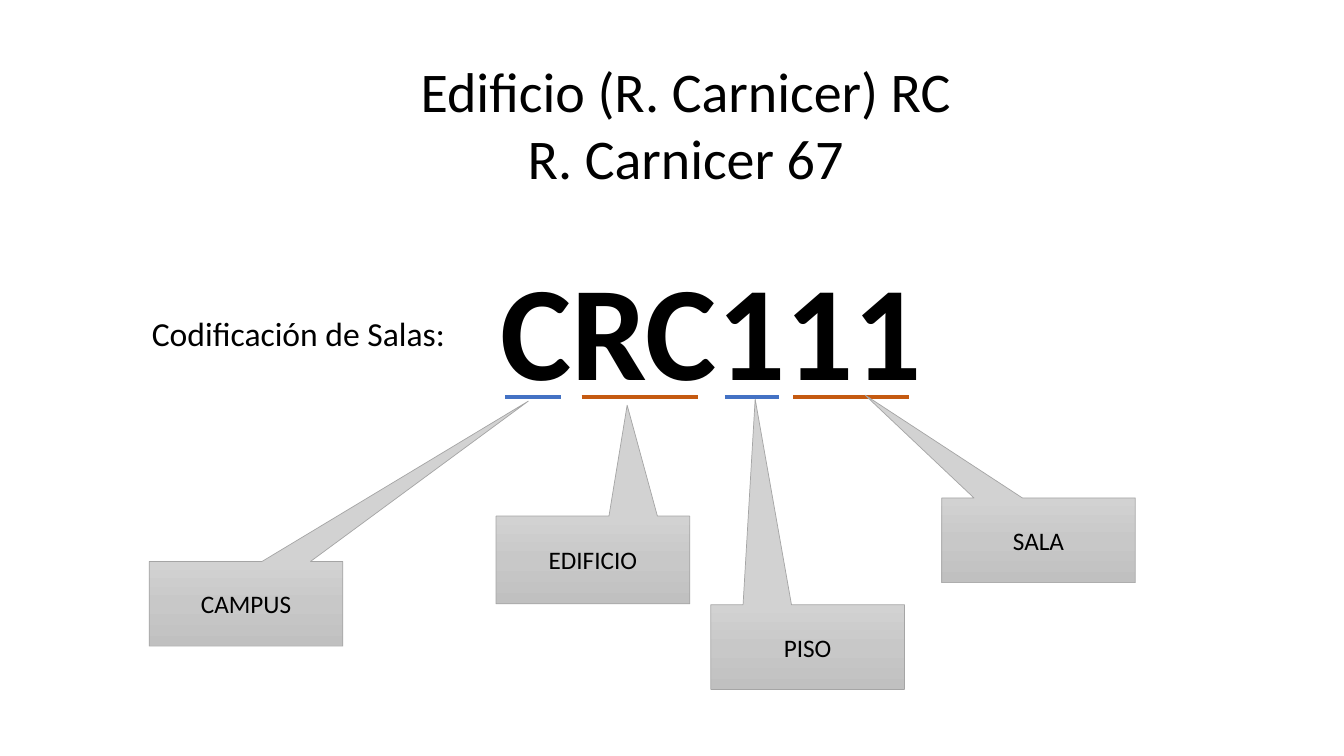
from copy import deepcopy
from dataclasses import dataclass

from lxml import etree
from pptx import Presentation
from pptx.dml.color import RGBColor
from pptx.enum.shapes import MSO_CONNECTOR, MSO_SHAPE
from pptx.enum.text import MSO_ANCHOR, MSO_AUTO_SIZE, PP_ALIGN
from pptx.oxml.ns import qn
from pptx.shapes.autoshape import Shape
from pptx.shapes.shapetree import GroupShapes, SlideShapes
from pptx.util import Inches, Pt

STRAIGHT = MSO_CONNECTOR.STRAIGHT
CALLOUT = MSO_SHAPE.RECTANGULAR_CALLOUT
CENTER = PP_ALIGN.CENTER
TOP, MIDDLE = MSO_ANCHOR.TOP, MSO_ANCHOR.MIDDLE
NO_AUTOFIT = MSO_AUTO_SIZE.NONE
TITLE_ONLY = 5


@dataclass(frozen=True)
class Theme:
    font: str = "Calibri"
    text: str = "000000"
    code_outline: str = "FFFFFF"
    blue: str = "4472C4"
    orange: str = "C55A11"
    callout_line: str = "A5A5A5"
    callout_fill: tuple[str, ...] = ("D2D2D2", "C8C8C8", "C0C0C0")
    title_size: int = 40
    label_size: int = 24
    code_size: int = 96
    callout_size: int = 18


@dataclass(frozen=True)
class Underline:
    left: float
    right: float
    color: str


@dataclass(frozen=True)
class CodePart:
    name: str
    left: float
    top: float
    height: float
    tip_x: float
    tip_y: float


THEME = Theme()
UNDERLINE_Y = 3.94
CALLOUT_WIDTH = 1.92
UNDERLINES = [
    Underline(5.01, 5.56, THEME.blue),
    Underline(7.87, 9.02, THEME.orange),
    Underline(7.19, 7.73, THEME.blue),
    Underline(5.77, 6.92, THEME.orange),
]
CODE_PARTS = [
    CodePart("CAMPUS", 1.48, 5.57, 0.84, 5.24, 3.98),
    CodePart("EDIFICIO", 4.92, 5.12, 0.87, 6.22, 4.02),
    CodePart("PISO", 7.05, 6.0, 0.84, 7.49, 3.96),
    CodePart("SALA", 9.34, 4.94, 0.84, 8.58, 3.92),
]


def write(shape: Shape, lines: list[str], size: int,
          anchor: MSO_ANCHOR = TOP, bold: bool = False) -> None:
    frame = shape.text_frame
    frame.text = "\n".join(lines)
    frame.word_wrap = True
    frame.auto_size = NO_AUTOFIT
    frame.vertical_anchor = anchor
    for paragraph in frame.paragraphs:
        paragraph.alignment = CENTER
        paragraph.font.name = THEME.font
        paragraph.font.size = Pt(size)
        paragraph.font.bold = bold
        paragraph.font.color.rgb = RGBColor.from_string(THEME.text)


def outline_text(shape: Shape, color: str, width: float) -> None:
    properties = shape.text_frame.paragraphs[0].runs[0].font._element
    line = etree.Element(qn("a:ln"), w=str(Pt(width)))
    fill = etree.SubElement(line, qn("a:solidFill"))
    etree.SubElement(fill, qn("a:srgbClr"), val=color)
    properties.insert(0, line)


def add_underline(shapes: GroupShapes, underline: Underline) -> None:
    y = Inches(UNDERLINE_Y)
    line = shapes.add_connector(
        STRAIGHT, Inches(underline.left), y, Inches(underline.right), y)
    line.line.color.rgb = RGBColor.from_string(underline.color)
    line.line.width = Pt(3)
    etree.SubElement(line._element.spPr, qn("a:effectLst"))


def fill_gradient(shape: Shape, colors: tuple[str, ...]) -> None:
    shape.fill.gradient()
    shape.fill.gradient_angle = 270
    stop_list = shape._element.spPr.find(".//" + qn("a:gsLst"))
    while len(stop_list) < len(colors):
        stop_list.append(deepcopy(stop_list[0]))
    for index, (stop, color) in enumerate(zip(shape.fill.gradient_stops, colors)):
        stop.position = index / (len(colors) - 1)
        stop.color.rgb = RGBColor.from_string(color)


def add_callout(shapes: SlideShapes, part: CodePart) -> None:
    callout = shapes.add_shape(
        CALLOUT, Inches(part.left), Inches(part.top),
        Inches(CALLOUT_WIDTH), Inches(part.height))
    # The tip is measured from the centre, as a share of the box
    callout.adjustments[0] = (part.tip_x - part.left) / CALLOUT_WIDTH - 0.5
    callout.adjustments[1] = (part.tip_y - part.top) / part.height - 0.5
    callout.shadow.inherit = False
    fill_gradient(callout, THEME.callout_fill)
    callout.line.color.rgb = RGBColor.from_string(THEME.callout_line)
    callout.line.width = Pt(0.5)
    write(callout, [part.name], THEME.callout_size, MIDDLE)


def main() -> None:
    prs = Presentation()
    prs.slide_width, prs.slide_height = Inches(13.33), Inches(7.5)
    slide = prs.slides.add_slide(prs.slide_layouts[TITLE_ONLY])
    shapes = slide.shapes

    # Title, with its first line set slightly to the left
    title = shapes.title
    title.left, title.top = Inches(3.14), Inches(0.51)
    title.width, title.height = Inches(7.57), Inches(2.12)
    write(title, ["Edificio (R. Carnicer) RC", "R. Carnicer 67"], THEME.title_size)
    first_line = title.text_frame.paragraphs[0]._p.get_or_add_pPr()
    first_line.set("marR", str(Inches(0.25)))

    # Label
    label = shapes.add_textbox(Inches(1.13), Inches(3.05), Inches(3.66), Inches(1.18))
    write(label, ["Codificación de Salas:"], THEME.label_size)

    # Room code with its underlined parts
    code_group = shapes.add_group_shape().shapes
    code = code_group.add_textbox(Inches(3.8), Inches(2.39), Inches(6.5), Inches(1.72))
    write(code, ["CRC111"], THEME.code_size, bold=True)
    outline_text(code, THEME.code_outline, 0.75)
    for underline in UNDERLINES:
        add_underline(code_group, underline)

    # Callouts naming each part
    for part in CODE_PARTS:
        add_callout(shapes, part)

    prs.save("out.pptx")


if __name__ == "__main__":
    main()
